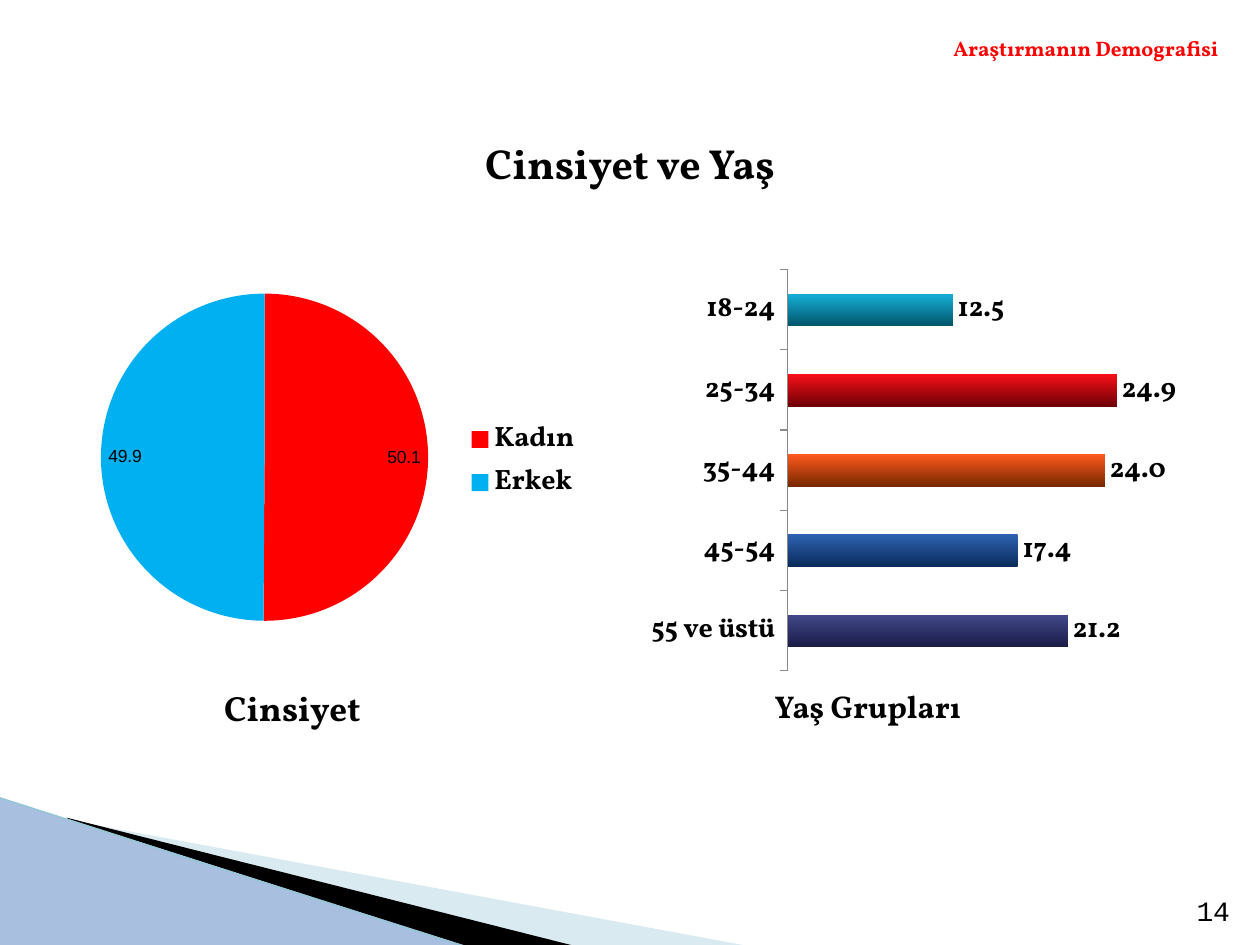
from dataclasses import dataclass

from lxml.etree import SubElement
from pptx import Presentation
from pptx.chart.data import CategoryChartData
from pptx.dml.color import RGBColor
from pptx.enum.chart import XL_CHART_TYPE, XL_LABEL_POSITION, XL_LEGEND_POSITION, XL_TICK_MARK
from pptx.enum.shapes import MSO_CONNECTOR, MSO_SHAPE
from pptx.enum.text import MSO_ANCHOR, PP_ALIGN
from pptx.oxml.ns import qn
from pptx.util import Inches, Pt


@dataclass(frozen=True)
class Theme:
    font: str = "Vollkorn"
    number_font: str = "Courier New"
    label_font: str = "Arial"
    ink: str = "000000"
    accent: str = "FF0000"
    axis: str = "898989"
    pale: str = "A0CBDC"
    wedge: str = "A8BFDF"
    edge: str = "97C5D8"
    title: int = 24
    caption: int = 20
    subcaption: int = 18
    chart: int = 16
    header: int = 12
    label: int = 10


THEME = Theme()
WIDTH, HEIGHT = 10, 7.5
GENDERS = {"Kadın": (50.1, "FF0000"), "Erkek": (49.9, "00B0F0")}
# Each age group: share, then the top and bottom colours of its bar
AGES = {
    "18-24": (12.5, "16B0D8", "00566A"),
    "25-34": (24.9, "FA1019", "6E0006"),
    "35-44": (24.0, "FF5A1E", "782800"),
    "45-54": (17.4, "2E62B0", "0A2C5C"),
    "55 ve üstü": (21.2, "43488A", "1A1C48"),
}


def inches(*lengths):
    return [Inches(n) for n in lengths]


def set_font(font, size, color=THEME.ink, name=THEME.font, bold=True):
    values = {"size": Pt(size), "name": name, "bold": bold}
    for key, value in values.items():
        setattr(font, key, value)
    font.color.rgb = RGBColor.from_string(color)


def paint(sp, color, alpha=None):
    sp.shadow.inherit = False
    sp.fill.solid()
    sp.fill.fore_color.rgb = RGBColor.from_string(color)
    sp.line.fill.background()
    if alpha:
        clr = sp._element.spPr.find(".//" + qn("a:srgbClr"))
        SubElement(clr, qn("a:alpha")).set("val", str(alpha * 1000))


def add_band(s, points, color, alpha=None):
    start, *rest = [inches(*point) for point in points]
    builder = s.shapes.build_freeform(*start)
    builder.add_line_segments(rest)
    paint(builder.convert_to_shape(), color, alpha)


def add_corner(s):
    add_band(s, [(0.55, 6.51), (5.95, 7.51), (4.56, 7.51), (0.55, 6.5)], THEME.pale, 40)
    add_band(s, [(0.53, 6.49), (4.57, 7.51), (3.72, 7.52), (0.54, 6.5)], THEME.ink)
    wedge = s.shapes.add_shape(MSO_SHAPE.RIGHT_TRIANGLE, *inches(-0.01, 6.33, 3.72, 1.18))
    paint(wedge, THEME.wedge)
    edge = s.shapes.add_connector(MSO_CONNECTOR.STRAIGHT, *inches(-0.01, 6.33, 3.71, 7.52))
    edge.line.color.rgb = RGBColor.from_string(THEME.edge)
    edge.line.width = Pt(0.95)
    SubElement(edge._element.spPr, qn("a:effectLst"))


def write(sp, text, size, align=PP_ALIGN.LEFT, anchor=MSO_ANCHOR.TOP, **font):
    tf = sp.text_frame
    tf.word_wrap = True
    tf.vertical_anchor = anchor
    p = tf.paragraphs[0]
    p.alignment = align
    r = p.add_run()
    r.text = text
    set_font(r.font, size, **font)


def add_title(s, text, box):
    title = s.shapes.title
    for key, value in zip(("left", "top", "width", "height"), inches(*box)):
        setattr(title, key, value)
    write(title, text, THEME.title, PP_ALIGN.CENTER, MSO_ANCHOR.MIDDLE)


def add_text(s, text, box, size, **style):
    write(s.shapes.add_textbox(*inches(*box)), text, size, **style)


def set_layout(parent, index, box, inner=False):
    """Place a chart part by shares of the chart's size."""
    for old in parent.findall(qn("c:layout")):
        parent.remove(old)
    layout = SubElement(parent, qn("c:layout"))
    parent.insert(index, layout)
    manual = SubElement(layout, qn("c:manualLayout"))
    values = {"layoutTarget": "inner"} if inner else {}
    values |= {"xMode": "edge", "yMode": "edge"} | dict(zip("xywh", box))
    for key, value in values.items():
        SubElement(manual, qn("c:" + key)).set("val", str(value))


def add_chart(s, kind, groups, box, plot_box):
    data = CategoryChartData(number_format="0.0")
    data.categories = list(groups)
    data.add_series("Series 1", [group[0] for group in groups.values()])
    chart = s.shapes.add_chart(kind, *inches(*box), data).chart
    chart.has_title = chart.has_legend = False
    set_font(chart.font, THEME.chart)
    set_layout(chart._chartSpace.find(".//" + qn("c:plotArea")), 0, plot_box, inner=True)
    return chart


def add_labels(plot, position, **font):
    plot.has_data_labels = True
    labels = plot.data_labels
    values = {"show_value": True, "number_format": "0.0",
              "number_format_is_linked": False, "position": position}
    for key, value in values.items():
        setattr(labels, key, value)
    set_font(labels.font, **font)


def add_gender_pie(s):
    chart = add_chart(s, XL_CHART_TYPE.PIE, GENDERS, (0.25, 2.24, 5, 3.02),
                      (0.11, 0.03, 0.52, 0.86))
    plot = chart.plots[0]
    for i, (_, color) in enumerate(GENDERS.values()):
        fill = plot.series[0].points[i].format.fill
        fill.solid()
        fill.fore_color.rgb = RGBColor.from_string(color)
    add_labels(plot, XL_LABEL_POSITION.INSIDE_END, size=THEME.label,
               name=THEME.label_font, bold=False)
    chart.has_legend = True
    legend = chart.legend
    legend.position = XL_LEGEND_POSITION.RIGHT
    legend.include_in_layout = False
    set_font(legend.font, THEME.chart)
    set_layout(legend._element, 1, (0.67, 0.35, 0.22, 0.24))


def add_age_bars(s):
    chart = add_chart(s, XL_CHART_TYPE.BAR_CLUSTERED, AGES, (4.75, 2, 5, 3.5),
                      (0.3, 0.04, 0.63, 0.91))
    plot = chart.plots[0]
    plot.gap_width = 150
    plot.vary_by_categories = False
    for i, (_, *colors) in enumerate(AGES.values()):
        fill = plot.series[0].points[i].format.fill
        fill.gradient()
        fill.gradient_angle = 270
        for stop, color in zip(fill.gradient_stops, colors):
            stop.color.rgb = RGBColor.from_string(color)
    add_labels(plot, XL_LABEL_POSITION.OUTSIDE_END, size=THEME.chart)
    ages, shares = chart.category_axis, chart.value_axis
    ages.reverse_order = True
    ages.major_tick_mark = XL_TICK_MARK.OUTSIDE
    ages.format.line.color.rgb = RGBColor.from_string(THEME.axis)
    set_font(ages.tick_labels.font, THEME.chart)
    values = {"minimum_scale": 0, "maximum_scale": 30,
              "has_major_gridlines": False, "visible": False}
    for key, value in values.items():
        setattr(shares, key, value)


def main():
    prs = Presentation()
    prs.slide_width, prs.slide_height = inches(WIDTH, HEIGHT)
    s = prs.slides.add_slide(prs.slide_layouts[5])
    add_corner(s)
    add_title(s, "Cinsiyet ve Yaş", (0.5, 0.94, 9, 0.7))
    add_text(s, "Cinsiyet", (1.68, 5.4, 1.29, 0.44), THEME.caption)
    add_text(s, "Yaş Grupları", (6.05, 5.4, 1.72, 0.4), THEME.subcaption)
    add_text(s, "Araştırmanın Demografisi", (0.86, 0.23, 8.91, 0.3), THEME.header,
             align=PP_ALIGN.RIGHT, color=THEME.accent)
    add_text(s, "14", (9.14, 7.01, 0.72, 0.4), THEME.chart, align=PP_ALIGN.RIGHT,
             anchor=MSO_ANCHOR.BOTTOM, name=THEME.number_font, bold=False)
    add_gender_pie(s)
    add_age_bars(s)
    prs.save("out.pptx")


if __name__ == "__main__":
    main()
